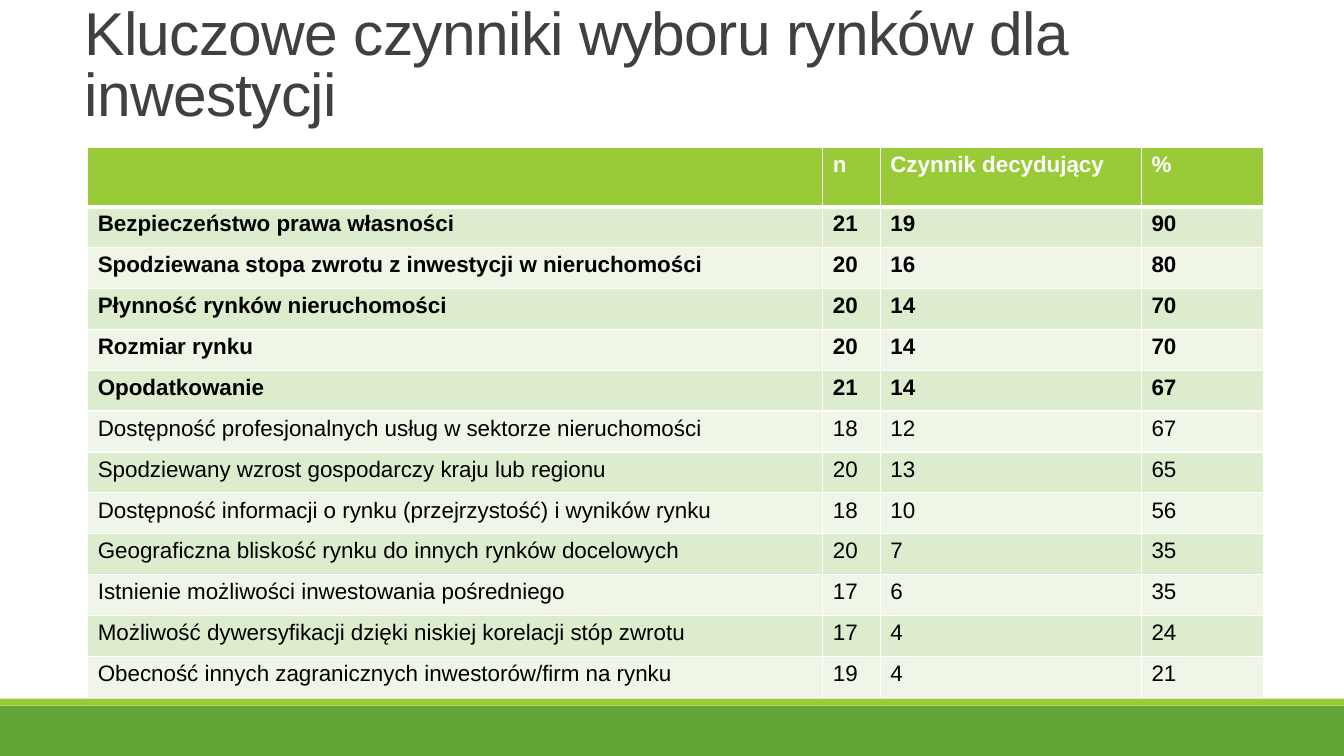
from lxml import etree
from pptx import Presentation
from pptx import util as u
from pptx.dml.color import RGBColor
from pptx.enum import shapes, text
from pptx.oxml import ns

GREEN = RGBColor(0x63, 0xA5, 0x37)
LIME = RGBColor(0x99, 0xCB, 0x38)
BAND_DARK = RGBColor(0xDE, 0xEC, 0xCE)
BAND_LIGHT = RGBColor(0xEF, 0xF6, 0xE8)
WHITE = RGBColor(0xFF, 0xFF, 0xFF)
BLACK = RGBColor(0, 0, 0)
CHARCOAL = RGBColor(0x40, 0x40, 0x40)

HEADER = ("", "n", "Czynnik decydujący", "%")
FACTORS = [
    ("Bezpieczeństwo prawa własności", 21, 19, 90),
    ("Spodziewana stopa zwrotu z inwestycji w nieruchomości", 20, 16, 80),
    ("Płynność rynków nieruchomości", 20, 14, 70),
    ("Rozmiar rynku", 20, 14, 70),
    ("Opodatkowanie", 21, 14, 67),
    ("Dostępność profesjonalnych usług w sektorze nieruchomości", 18, 12, 67),
    ("Spodziewany wzrost gospodarczy kraju lub regionu", 20, 13, 65),
    ("Dostępność informacji o rynku (przejrzystość) i wyników rynku", 18, 10, 56),
    ("Geograficzna bliskość rynku do innych rynków docelowych", 20, 7, 35),
    ("Istnienie możliwości inwestowania pośredniego", 17, 6, 35),
    ("Możliwość dywersyfikacji dzięki niskiej korelacji stóp zwrotu", 17, 4, 24),
    ("Obecność innych zagranicznych inwestorów/firm na rynku", 19, 4, 21),
]
KEY_FACTORS = 5


def apply(target, formats):
    for name, value in formats.items():
        setattr(target, name, value)


class SlideBuilder:
    font_name = "Arial"

    def __init__(self, presentation):
        self.width = presentation.slide_width
        self.height = presentation.slide_height
        self.slide = presentation.slides.add_slide(presentation.slide_layouts[6])

    def across(self, percent):
        return u.Emu(round(self.width * percent / 100))

    def down(self, percent):
        return u.Emu(round(self.height * percent / 100))

    def frame(self, left, top, width, height):
        return self.across(left), self.down(top), self.across(width), self.down(height)

    def add_words(self, paragraph, words, size, color, bold=False):
        run = paragraph.add_run()
        run.text = words
        apply(run.font, {"name": self.font_name, "size": u.Pt(size), "bold": bold})
        run.font.color.rgb = color
        return run

    def bar(self, top, height, color):
        shape = self.slide.shapes.add_shape(
            shapes.MSO_SHAPE.RECTANGLE, *self.frame(0, top, 100, height))
        shape.shadow.inherit = False
        shape.fill.solid()
        shape.fill.fore_color.rgb = color
        shape.line.fill.background()

    def title(self, words, *box):
        frame = self.slide.shapes.add_textbox(*self.frame(*box)).text_frame
        apply(frame, {"word_wrap": True, "vertical_anchor": text.MSO_ANCHOR.BOTTOM})
        paragraph = frame.paragraphs[0]
        paragraph.line_spacing = 0.85
        run = self.add_words(paragraph, words, 43.2, CHARCOAL)
        run.font._element.set("spc", "-50")

    def borders(self, cell, top, bottom):
        properties = cell._tc.get_or_add_tcPr()
        for side, points in {"L": 1, "R": 1, "T": top, "B": bottom}.items():
            line = etree.SubElement(
                properties, ns.qn(f"a:ln{side}"), w=str(u.Pt(points)))
            fill = etree.SubElement(line, ns.qn("a:solidFill"))
            etree.SubElement(fill, ns.qn("a:srgbClr"), val=str(WHITE))

    def table(self, rows, left, top, columns, header_height, row_height):
        height = header_height + row_height * (len(rows) - 1)
        table = self.slide.shapes.add_table(
            len(rows), len(columns),
            *self.frame(left, top, sum(columns), height)).table
        for column, width in zip(table.columns, columns):
            column.width = self.across(width)
        for index, values in enumerate(rows):
            is_header = index == 0
            table.rows[index].height = self.down(header_height if is_header else row_height)
            band = BAND_DARK if index % 2 else BAND_LIGHT
            for cell, value in zip(table.rows[index].cells, values):
                self.borders(cell, 3 if index == 1 else 1, 3 if is_header else 1)
                cell.fill.solid()
                cell.fill.fore_color.rgb = LIME if is_header else band
                if value != "":
                    self.add_words(cell.text_frame.paragraphs[0], str(value), 16,
                                   WHITE if is_header else BLACK, index <= KEY_FACTORS)


def main():
    presentation = Presentation()
    apply(presentation, {"slide_width": u.Inches(13.33), "slide_height": u.Inches(7.5)})
    builder = SlideBuilder(presentation)
    builder.bar(93.33, 6.67, GREEN)
    builder.bar(92.4, 0.93, LIME)
    builder.title("Kluczowe czynniki wyboru rynków dla inwestycji", 5.55, 2.67, 87.4, 15.07)
    builder.table([HEADER, *FACTORS], 6.53, 19.47, (54.69, 4.28, 19.43, 9.08), 7.87, 5.41)
    presentation.save("out.pptx")


if __name__ == "__main__":
    main()
